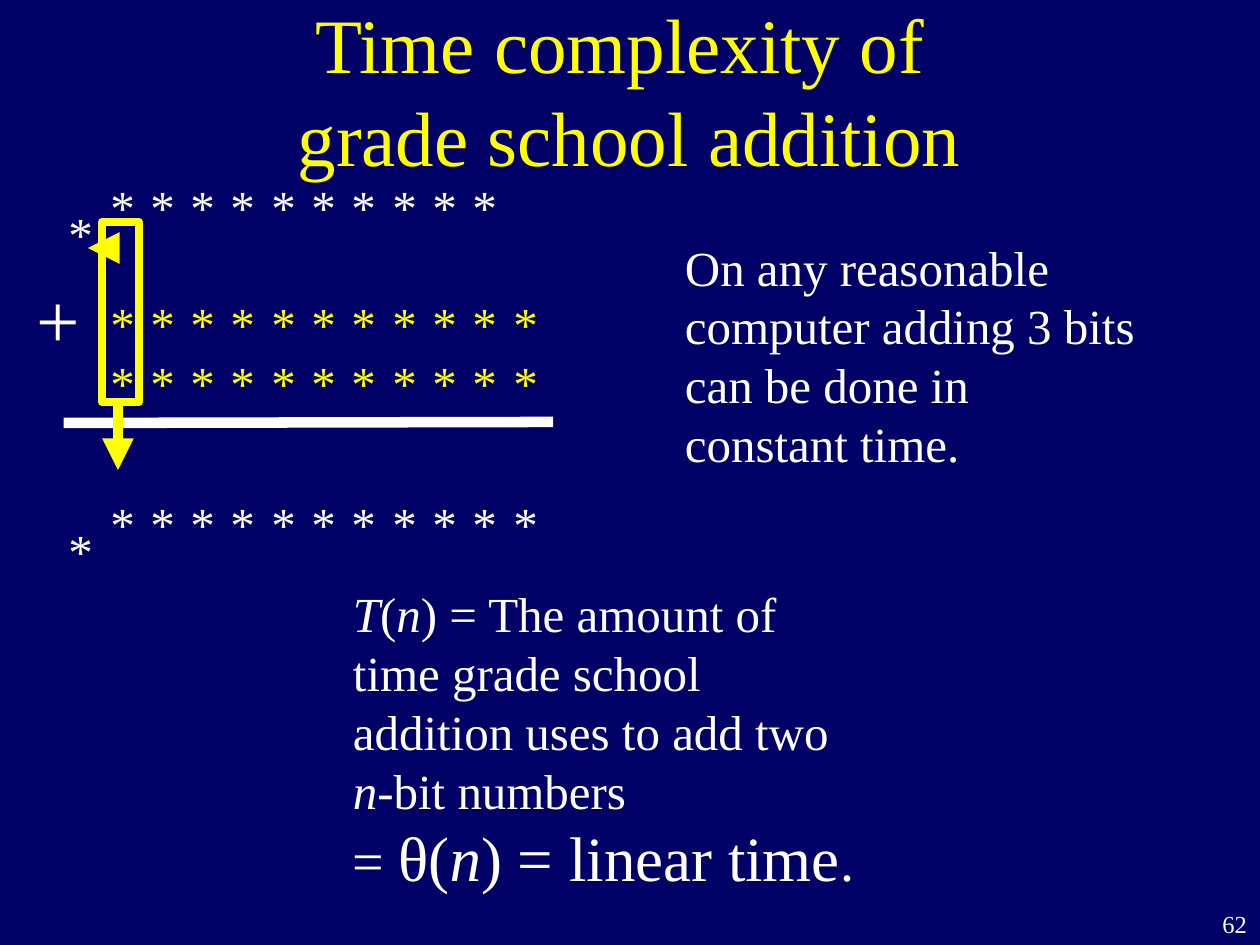
from lxml.etree import SubElement
from pptx import Presentation
from pptx.dml.color import RGBColor
from pptx.enum.shapes import MSO_CONNECTOR, MSO_SHAPE
from pptx.enum.text import MSO_ANCHOR, PP_ALIGN
from pptx.oxml.ns import qn
from pptx.util import Pt

NAVY = RGBColor(0x00, 0x00, 0x66)
WHITE = RGBColor(0xFF, 0xFF, 0xFF)
YELLOW = RGBColor(0xFF, 0xFF, 0x00)
FONT = "Times New Roman"
EMU_PER_PX = 914400 // 126
POINTS_PER_PX = 72 / 126
COLUMNS = 11
LINE_HEIGHT = 59


def px(value):
    return value * EMU_PER_PX


def add_text_frame(slide, box, side=38, anchor=MSO_ANCHOR.TOP):
    frame = slide.shapes.add_textbox(*map(px, box)).text_frame
    frame.word_wrap = True
    frame.vertical_anchor = anchor
    frame.margin_left = frame.margin_right = px(side)
    frame.margin_top = frame.margin_bottom = px(6)
    return frame


def add_run(paragraph, text, size=28, color=WHITE, italic=False):
    run = paragraph.add_run()
    run.text = text
    run.font.name = FONT
    run.font.size = Pt(size)
    run.font.color.rgb = color
    run.font.italic = italic


def add_line(slide, start, end, color, arrow=False):
    connector = slide.shapes.add_connector(
        MSO_CONNECTOR.STRAIGHT, *map(px, start + end))
    connector.line.color.rgb = color
    connector.line.width = Pt(6)
    line = connector.line._get_or_add_ln()
    line.set("cap", "sq")
    if arrow:
        SubElement(line, qn("a:tailEnd"), type="triangle")
    SubElement(connector._element.spPr, qn("a:effectLst"))


def add_title(slide, box):
    frame = add_text_frame(slide, box, 13, MSO_ANCHOR.MIDDLE)
    paragraph = frame.paragraphs[0]
    paragraph.alignment = PP_ALIGN.CENTER
    add_run(paragraph, "Time complexity of ", 44, YELLOW)
    paragraph.add_line_break()
    add_run(paragraph, "grade school addition", 44, YELLOW)


def add_star_column(slide, box, stars):
    frame = add_text_frame(slide, box)
    for index, (gap, color) in enumerate(stars):
        paragraph = frame.add_paragraph() if index else frame.paragraphs[0]
        paragraph.alignment = PP_ALIGN.CENTER
        if gap:
            paragraph.space_before = Pt(round(gap * POINTS_PER_PX, 1))
        add_run(paragraph, "*", 28, color)


def add_addition(slide, box):
    left, top, width, height = box
    column_width = 105
    operands = [(0, YELLOW), (0, YELLOW), (82, WHITE)]
    full_column = [(0, WHITE), (LINE_HEIGHT, YELLOW)] + operands[1:]

    add_star_column(slide, (left + 28, top + 27, column_width, 336),
                    [(0, WHITE), (259, WHITE)])
    for column in range(COLUMNS):
        column_left = left + 70 + column * 403 // 10
        last = column == COLUMNS - 1
        offset = 2 * LINE_HEIGHT if last else 0
        add_star_column(
            slide, (column_left, top + offset, column_width, height - offset),
            operands if last else full_column)

    plus = add_text_frame(
        slide, (left + 7, top + 95, 102, 105), 0, MSO_ANCHOR.MIDDLE)
    plus.paragraphs[0].alignment = PP_ALIGN.CENTER
    add_run(plus.paragraphs[0], "+", 44)

    add_line(slide, (left + 548, top + 252), (left + 69, top + 253), WHITE)
    add_line(slide, (left + 118, top + 241), (left + 118, top + 300),
             YELLOW, True)
    frame = slide.shapes.add_shape(
        MSO_SHAPE.RECTANGLE, px(left + 102), px(top + 52), px(37), px(180))
    frame.shadow.inherit = False
    frame.fill.background()
    frame.line.color.rgb = YELLOW
    frame.line.width = Pt(4.5)
    add_line(slide, (left + 101, top + 78), (left + 88, top + 78),
             YELLOW, True)


def add_definition(slide, box):
    frame = add_text_frame(slide, box, anchor=MSO_ANCHOR.MIDDLE)
    paragraph = frame.paragraphs[0]
    add_run(paragraph, "T", italic=True)
    add_run(paragraph, "(")
    add_run(paragraph, "n", italic=True)
    add_run(paragraph, ") = The amount of time grade school "
                       "addition uses to add two ")
    add_run(paragraph, "n", italic=True)
    add_run(paragraph, "-bit numbers")
    result = frame.add_paragraph()
    add_run(result, "= ", 32)
    add_run(result, "θ(", 36)
    add_run(result, "n", 36, italic=True)
    add_run(result, ") = linear time", 36)
    add_run(result, ".", 32)


def add_remark(slide, box):
    frame = add_text_frame(slide, box, 13)
    add_run(frame.paragraphs[0], "On any reasonable computer adding 3 bits "
                                 "can be done in constant time.")


def add_slide_number(slide, box):
    paragraph = add_text_frame(slide, box, 13).paragraphs[0]
    paragraph.alignment = PP_ALIGN.RIGHT
    add_run(paragraph, "62", 14)


def main():
    presentation = Presentation()
    presentation.slide_width = px(1260)
    presentation.slide_height = px(945)
    slide = presentation.slides.add_slide(presentation.slide_layouts[6])
    slide.background.fill.solid()
    slide.background.fill.fore_color.rgb = NAVY
    add_slide_number(slide, (1197, 903, 63, 42))
    add_title(slide, (94, 10, 1071, 158))
    add_addition(slide, (0, 170, 580, 396))
    add_definition(slide, (315, 577, 583, 324))
    add_remark(slide, (672, 231, 483, 248))
    presentation.save("out.pptx")


if __name__ == "__main__":
    main()
